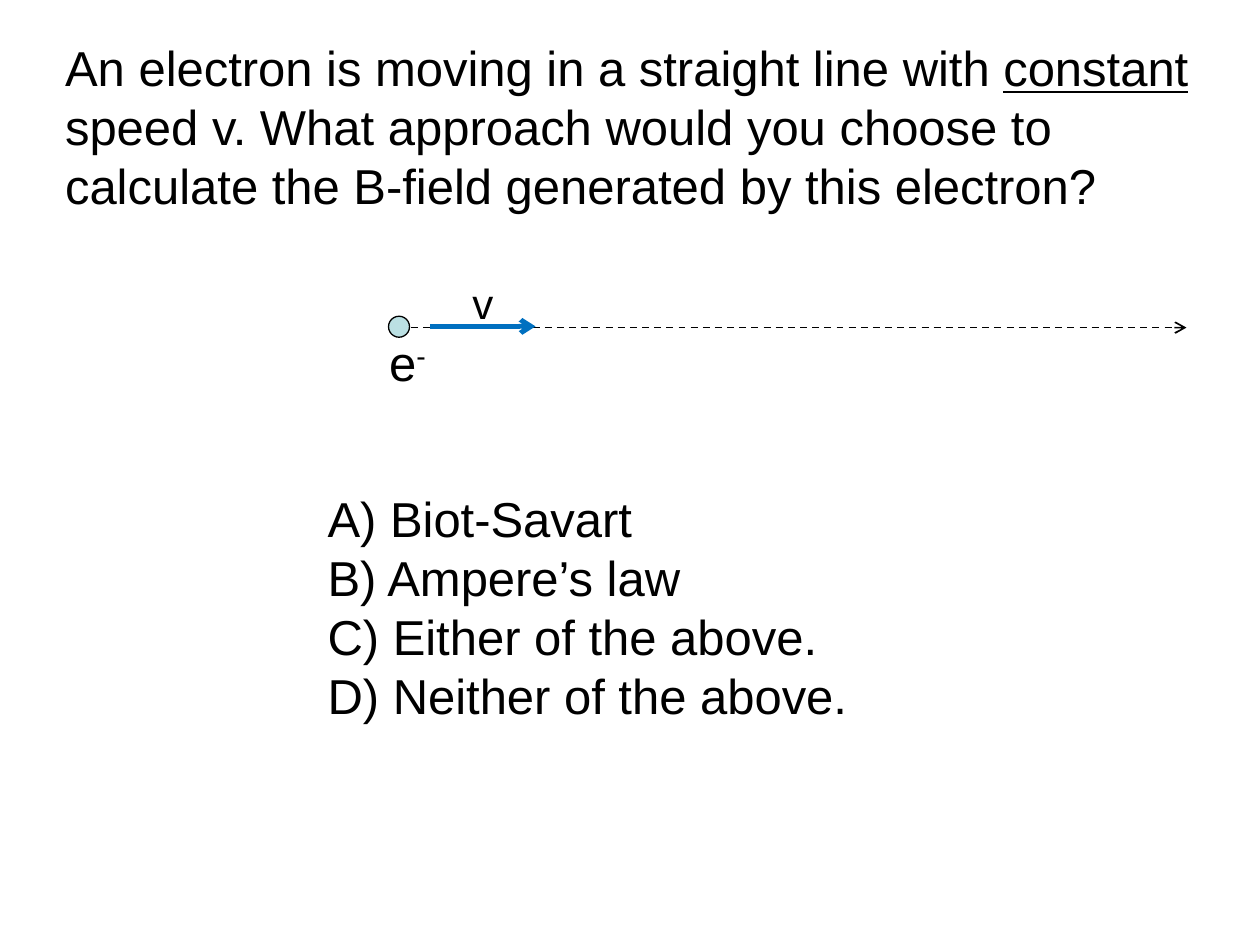
from dataclasses import dataclass
from typing import Optional

from lxml import etree
from pptx import Presentation
from pptx.dml.color import RGBColor
from pptx.enum import dml, shapes, text
from pptx.oxml.ns import qn
from pptx.util import Pt

COLORS = {"ink": "000000", "velocity": "0070C0", "electron": "BBE0E3"}
FONT = "Arial"
ANSWERS = ["Biot-Savart", "Ampere’s law", "Either of the above.", "Neither of the above."]


@dataclass
class Run:
    text: str
    size: float = 28
    underline: bool = False
    superscript: bool = False


@dataclass
class Box:
    left: float
    top: float
    width: float
    height: float


@dataclass
class Arrow:
    start: float
    end: float
    y: float
    color: str
    width: float
    dash: Optional[dml.MSO_LINE_DASH_STYLE] = None


ARROWS = [
    Arrow(228, 678, 187.2, "ink", 1, dml.MSO_LINE_DASH_STYLE.DASH),
    Arrow(246, 306, 186.5, "velocity", 2.75),
]
LABELS = [
    (Box(215.3, 186.5, 36.7, 41), [Run("e"), Run("-", superscript=True)]),
    (Box(262.8, 154.8, 23.8, 36.7), [Run("v", size=24)]),
]


def rgb(name: str) -> RGBColor:
    return RGBColor.from_string(COLORS[name])


def place(sp, box: Box, wrap: bool = True):
    """Move a text shape and give it a plain, top-anchored frame."""
    for name in ("left", "top", "width", "height"):
        setattr(sp, name, Pt(getattr(box, name)))
    tf = sp.text_frame
    frame_format = {"word_wrap": wrap, "auto_size": text.MSO_AUTO_SIZE.NONE,
                    "vertical_anchor": text.MSO_ANCHOR.TOP}
    for name, value in frame_format.items():
        setattr(tf, name, value)
    return tf


def write(p, runs: list[Run]) -> None:
    p.alignment = text.PP_ALIGN.LEFT
    p.space_before = Pt(0)
    for run in runs:
        r = p.add_run()
        r.text = run.text
        font_format = {"name": FONT, "size": Pt(run.size), "underline": run.underline}
        for name, value in font_format.items():
            setattr(r.font, name, value)
        r.font.color.rgb = rgb("ink")
        if run.superscript:
            r.font._element.set("baseline", "30000")


def number_with_letters(p, indent: float) -> None:
    pPr = p._p.get_or_add_pPr()
    pPr.set("marL", str(Pt(indent)))
    pPr.set("indent", str(Pt(-indent)))
    etree.SubElement(pPr, qn("a:buFont"), typeface=FONT)
    etree.SubElement(pPr, qn("a:buAutoNum"), type="alphaUcParenR")


def draw_arrow(slide, arrow: Arrow) -> None:
    sp = slide.shapes.add_connector(
        shapes.MSO_CONNECTOR.STRAIGHT,
        Pt(arrow.start), Pt(arrow.y), Pt(arrow.end), Pt(arrow.y))
    sp.line.color.rgb = rgb(arrow.color)
    sp.line.width = Pt(arrow.width)
    if arrow.dash:
        sp.line.dash_style = arrow.dash
    etree.SubElement(sp.line._get_or_add_ln(), qn("a:tailEnd"), type="arrow")
    etree.SubElement(sp._element.spPr, qn("a:effectLst"))


def draw_electron(slide, left: float, top: float, size: float) -> None:
    sp = slide.shapes.add_shape(
        shapes.MSO_SHAPE.OVAL, Pt(left), Pt(top), Pt(size), Pt(size))
    sp.shadow.inherit = False
    sp.fill.solid()
    sp.fill.fore_color.rgb = rgb("electron")
    sp.line.color.rgb = rgb("ink")
    sp.line.width = Pt(0.75)


def main() -> None:
    prs = Presentation()
    prs.slide_width, prs.slide_height = Pt(720), Pt(540)
    slide = prs.slides.add_slide(prs.slide_layouts[1])

    question = place(slide.shapes.title, Box(30, 18, 666, 108.7))
    write(question.paragraphs[0], [
        Run("An electron is moving in a straight line with "),
        Run("constant", underline=True),
        Run(" speed v. What approach would you choose to calculate"
            " the B-field generated by this electron?"),
    ])

    answers = place(slide.placeholders[1], Box(180, 275.8, 315.4, 143.3), wrap=False)
    for i, answer in enumerate(ANSWERS):
        p = answers.add_paragraph() if i else answers.paragraphs[0]
        write(p, [Run(" " + answer)])
        number_with_letters(p, 27)

    for arrow in ARROWS:
        draw_arrow(slide, arrow)
    for box, runs in LABELS:
        sp = slide.shapes.add_textbox(0, 0, 0, 0)
        write(place(sp, box, wrap=False).paragraphs[0], runs)
    draw_electron(slide, 222, 180.7, 12)

    prs.save("out.pptx")


if __name__ == "__main__":
    main()
